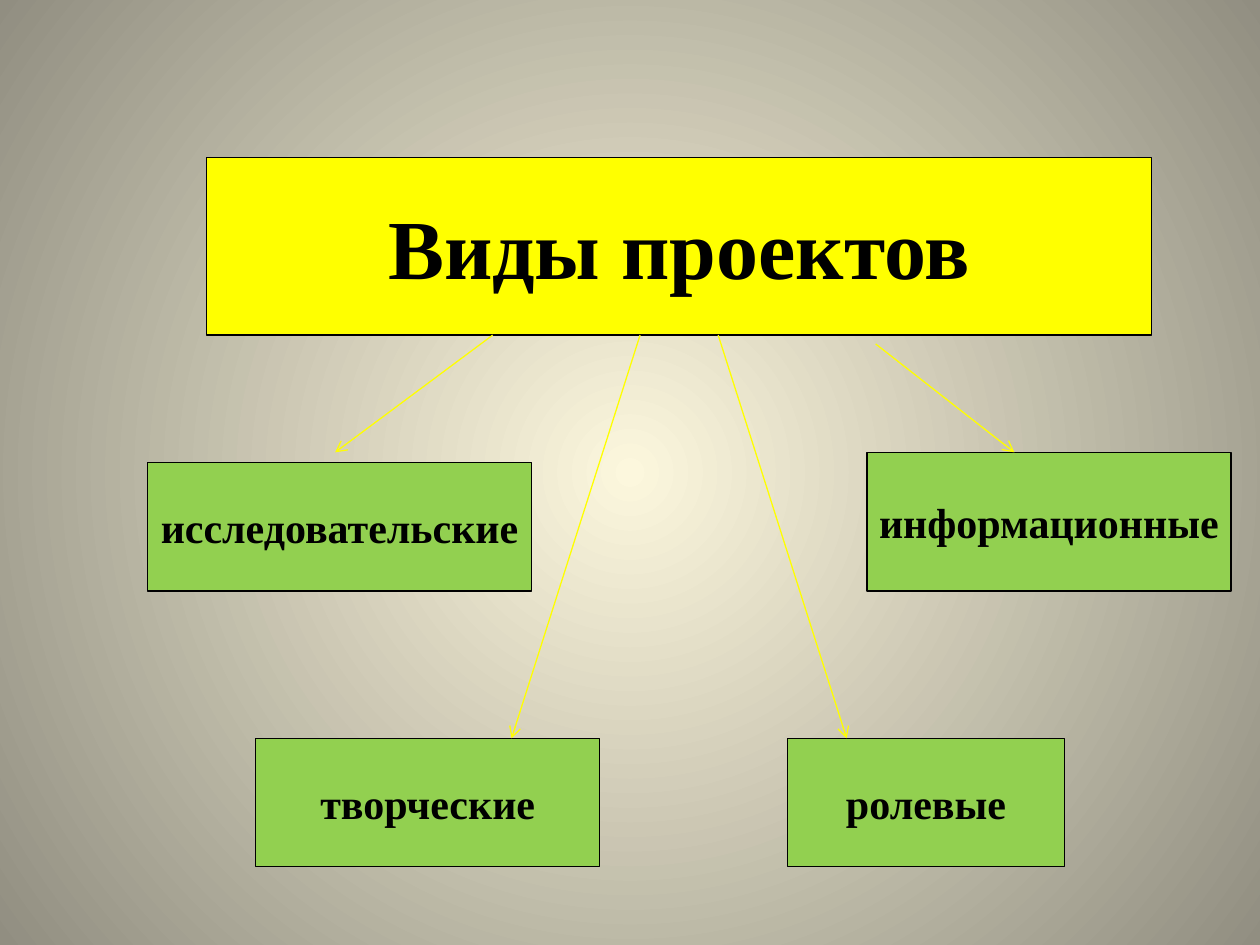
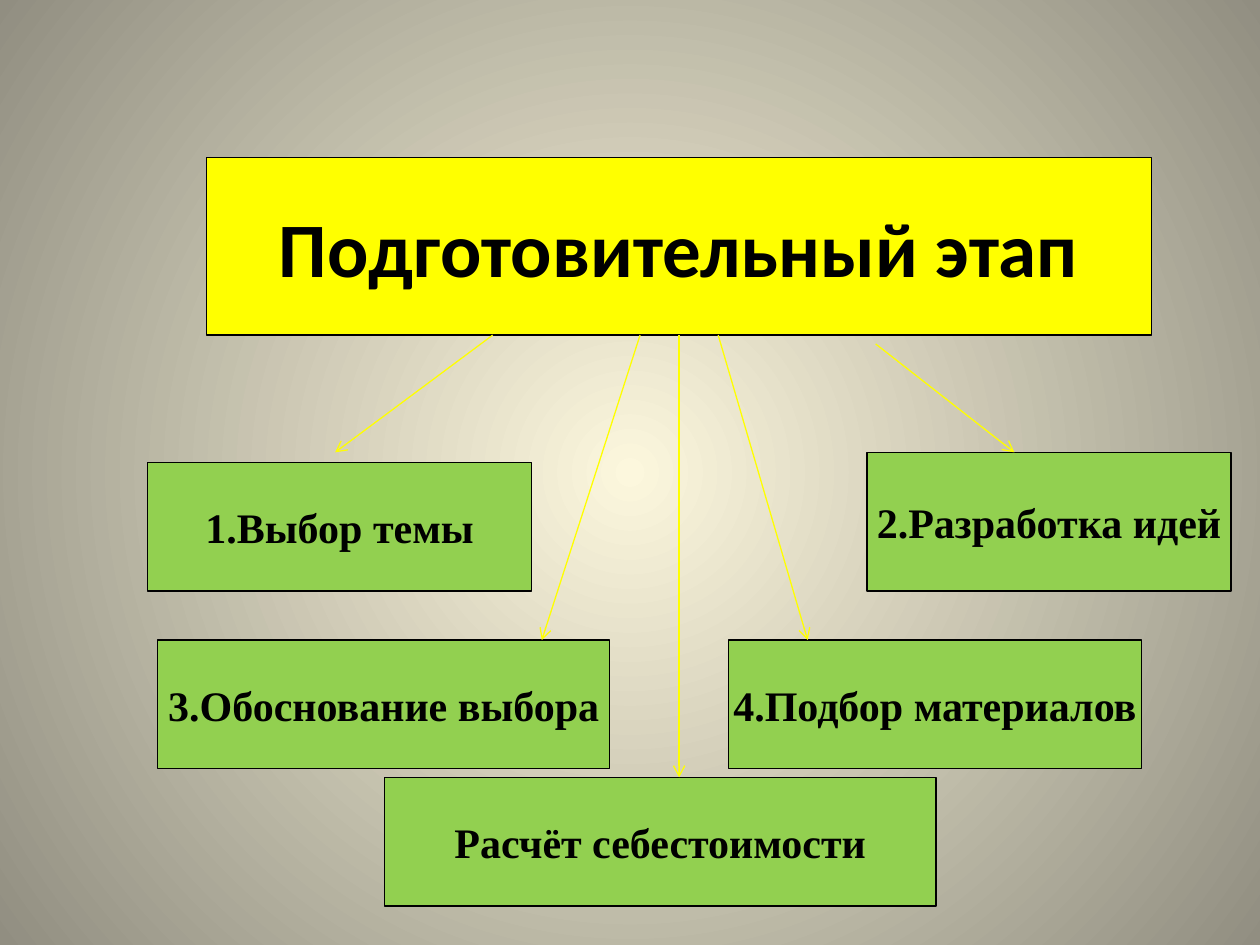
from lxml import etree
from pptx import Presentation
from pptx.dml.color import RGBColor
from pptx.enum.shapes import MSO_CONNECTOR, MSO_SHAPE
from pptx.enum.text import MSO_ANCHOR, MSO_AUTO_SIZE, PP_ALIGN
from pptx.oxml.ns import qn
from pptx.util import Inches, Pt

RECTANGLE = MSO_SHAPE.RECTANGLE
STRAIGHT = MSO_CONNECTOR.STRAIGHT
CENTER = PP_ALIGN.CENTER
BOTTOM_SIDE = 2
TITLE_ONLY = 5

COLORS = {
    "glow": "FCF7DD",
    "edge": "918E81",
    "title": "FFFF00",
    "kind": "92D050",
    "arrow": "FFFF00",
    "ink": "000000",
}
SERIF = "Times New Roman"
LINE_WIDTH = Pt(0.75)
BOX_HEIGHT = 1.02
TITLE = (1.64, 1.25, 7.5, 1.41)
TITLE_BOTTOM = TITLE[1] + TITLE[3]
UPPER_LEFT = (1.17, 3.67, 3.05, BOX_HEIGHT)
UPPER_RIGHT = (6.88, 3.59, 2.89, 1.1)
UPPER_ARROWS = [
    ((3.91, TITLE_BOTTOM), (2.66, 3.59)),
    ((6.95, 2.73), (8.05, 3.59)),
]
INNER_LEFT = (5.08, TITLE_BOTTOM)
INNER_RIGHT = (5.7, TITLE_BOTTOM)
TITLE_MIDDLE = (TITLE[0] + TITLE[2] / 2, TITLE_BOTTOM)

SLIDES = [
    {
        "title": ("Виды проектов", SERIF, 48),
        "boxes": [
            ("информационные", UPPER_RIGHT),
            ("ролевые", (6.25, 5.86, 2.2, BOX_HEIGHT)),
            ("творческие", (2.03, 5.86, 2.73, BOX_HEIGHT)),
            ("исследовательские", UPPER_LEFT),
        ],
        "arrows": [
            (INNER_LEFT, (4.06, 5.86)),
            (INNER_RIGHT, (6.72, 5.86)),
        ],
    },
    {
        "title": ("Подготовительный этап", "Calibri", 44),
        "boxes": [
            ("2.Разработка идей", UPPER_RIGHT),
            ("4.Подбор материалов", (5.78, 5.08, 3.28, BOX_HEIGHT)),
            ("3.Обоснование выбора", (1.25, 5.08, 3.59, BOX_HEIGHT)),
            ("1.Выбор темы", UPPER_LEFT),
            ("Расчёт себестоимости", (3.05, 6.17, 4.38, BOX_HEIGHT)),
        ],
        "arrows": [
            (INNER_LEFT, (4.3, 5.08)),
            (INNER_RIGHT, (6.41, 5.08)),
            (TITLE_MIDDLE, (5.39, 6.17)),
        ],
    },
]


def color(name):
    return RGBColor.from_string(COLORS[name])


def paint_background(master):
    fill = master.background.fill
    fill.gradient()
    for stop, position, name in zip(fill.gradient_stops, (0, 1), ("glow", "edge")):
        stop.position = position
        stop.color.rgb = color(name)
    gradient = master.element.find(".//" + qn("a:gradFill"))
    gradient.remove(gradient.find(qn("a:lin")))
    circle = etree.SubElement(gradient, qn("a:path"), path="circle")
    sides = dict.fromkeys("ltrb", "50000")
    etree.SubElement(circle, qn("a:fillToRect"), sides)


def format_box(box, text, fill_name, font_name, size):
    box.fill.solid()
    box.fill.fore_color.rgb = color(fill_name)
    box.line.color.rgb = color("ink")
    box.line.width = LINE_WIDTH
    frame = box.text_frame
    frame_format = {
        "auto_size": MSO_AUTO_SIZE.NONE,
        "word_wrap": False,
        "vertical_anchor": MSO_ANCHOR.MIDDLE,
    }
    for key, value in frame_format.items():
        setattr(frame, key, value)
    para = frame.paragraphs[0]
    para.alignment = CENTER
    span = para.add_run()
    span.text = text
    font_format = {"name": font_name, "size": Pt(size), "bold": True}
    for key, value in font_format.items():
        setattr(span.font, key, value)
    span.font.color.rgb = color("ink")


def add_title(page, text, font_name, size):
    title = page.shapes.title
    for key, value in zip(("left", "top", "width", "height"), TITLE):
        setattr(title, key, Inches(value))
    format_box(title, text, "title", font_name, size)
    return title


def add_box(page, text, place):
    box = page.shapes.add_shape(RECTANGLE, *map(Inches, place))
    box.shadow.inherit = False
    format_box(box, text, "kind", SERIF, 24)


def add_arrow(page, title, start, end):
    arrow = page.shapes.add_connector(STRAIGHT, *map(Inches, start + end))
    if start == TITLE_MIDDLE:
        arrow.begin_connect(title, BOTTOM_SIDE)
    arrow.line.color.rgb = color("arrow")
    arrow.line.width = LINE_WIDTH
    etree.SubElement(arrow.line._get_or_add_ln(), qn("a:tailEnd"), type="arrow")
    etree.SubElement(arrow._element.spPr, qn("a:effectLst"))


def main():
    deck = Presentation()
    deck.slide_width = Inches(10)
    deck.slide_height = Inches(7.5)
    paint_background(deck.slide_master)
    for content in SLIDES:
        page = deck.slides.add_slide(deck.slide_layouts[TITLE_ONLY])
        title = add_title(page, *content["title"])
        for text, place in content["boxes"]:
            add_box(page, text, place)
        for start, end in UPPER_ARROWS + content["arrows"]:
            add_arrow(page, title, start, end)
    deck.save("out.pptx")


if __name__ == "__main__":
    main()
